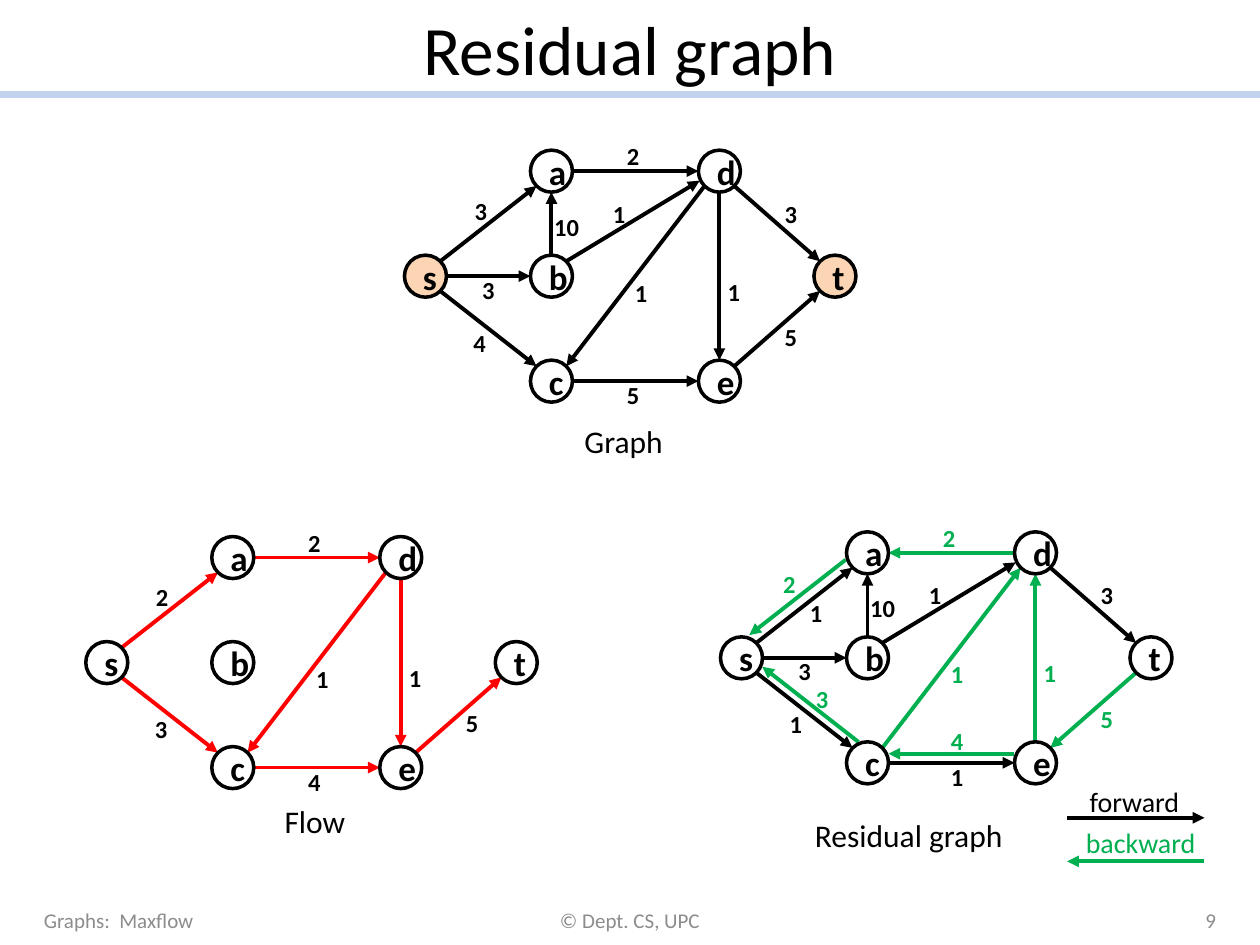
from pptx import Presentation
from pptx.dml.color import RGBColor
from pptx.enum.shapes import MSO_CONNECTOR, MSO_SHAPE
from pptx.enum.text import MSO_ANCHOR, MSO_AUTO_SIZE, PP_ALIGN
from pptx.oxml.ns import qn
from pptx.util import Pt
from lxml import etree

STRAIGHT, OVAL = MSO_CONNECTOR.STRAIGHT, MSO_SHAPE.OVAL
LEFT, CENTER, RIGHT = PP_ALIGN.LEFT, PP_ALIGN.CENTER, PP_ALIGN.RIGHT
TOP, MIDDLE = MSO_ANCHOR.TOP, MSO_ANCHOR.MIDDLE
FIT = MSO_AUTO_SIZE.SHAPE_TO_FIT_TEXT

BLACK, RED, GREEN = "000000", "FF0000", "00B050"
GRAY, PEACH, PALE_BLUE = "8C8C8C", "FCD5B5", "C2D1ED"

DIAMETER = 24
DIAGONAL = 8.49  # reach of a 45 degree point on a node's outline
# Offsets from the top left corner of a graph
NODES = {"s": (0, 60), "a": (72, 0), "b": (72, 60), "c": (72, 120),
         "d": (168, 0), "e": (168, 120), "t": (234, 60)}
LABELS = {"sa": (33, 22.7), "ad": (120, -8.6), "sb": (37.4, 67.7),
          "sc": (32.4, 97.9), "ce": (120, 128), "bd": (112, 24.2),
          "ba": (78.5, 31.7), "dt": (210.2, 24.2), "dc": (124.6, 69.4),
          "de": (177.6, 68.7), "et": (210.2, 94.7),
          "as": (28.8, 18), "cs": (47.5, 83.5), "ec": (124.6, 107.3)}
# Backward edges drawn beside a forward edge
SHIFTS = {"as": (-4, -4.5), "cs": (3.4, -3.4), "ec": (0, -5.2)}
END_NUDGES = {"bd": (-2.8, -3)}

# Edges are (ends, capacity or flow)
GRAPHS = [
    {"origin": (231.1, 85.8), "color": BLACK, "fills": {"s": PEACH, "t": PEACH},
     "edges": [("sa", 3), ("ad", 2), ("sb", 3), ("sc", 4), ("ce", 5), ("bd", 1),
               ("ba", 10), ("dt", 3), ("dc", 1), ("de", 1), ("et", 5)]},
    {"origin": (49, 306.6), "color": RED,
     "edges": [("sa", 2), ("ad", 2), ("sc", 3), ("ce", 4), ("dc", 1), ("de", 1),
               ("et", 5)]},
    {"origin": (411.7, 303.9), "color": BLACK,
     "edges": [("sa", 1), ("sb", 3), ("sc", 1), ("ce", 1), ("bd", 1), ("ba", 10),
               ("dt", 3)],
     "backward": [("as", 2), ("da", 2), ("cs", 3), ("ec", 4), ("cd", 1),
                  ("ed", 1), ("te", 5)],
     "labels": {"sa": (44, 34.5), "ce": (124.6, 128)}},
]

# Text, left, top, width, height, size, colour
CAPTIONS = [
    ("Graph", 326.9, 237.6, 59.8, 29, 18, BLACK),
    ("Flow", 155.5, 455, 49.7, 29, 18, BLACK),
    ("Residual graph", 458.6, 463, 123, 29, 18, BLACK),
    ("forward", 615.6, 445, 66.2, 26.6, 16, BLACK),
    ("backward", 613.4, 468, 77.8, 26.6, 16, GREEN),
]
# Text, left, top, width, height, size, colour, alignment
FRAME_TEXTS = [
    ("Residual graph", 36, 0, 648, 54, 39.6, BLACK, CENTER),
    ("Graphs:  Maxflow", 18, 511.2, 168, 28.8, 12, GRAY, LEFT),
    ("© Dept. CS, UPC", 246, 511.2, 228, 28.8, 12, GRAY, CENTER),
    ("9", 534, 511.2, 168, 28.8, 12, GRAY, RIGHT),
]
LEGEND_ARROWS = [((609.8, 467.3), (688.3, 467.3), BLACK),
                 ((688.3, 492.2), (609.8, 492.2), GREEN)]


def rgb(color):
    return RGBColor.from_string(color)


def write(shape, text, align=LEFT, anchor=TOP, wrap=True, **font_format):
    frame = shape.text_frame
    frame.word_wrap = wrap
    frame.vertical_anchor = anchor
    if not wrap:
        frame.auto_size = FIT
    paragraph = frame.paragraphs[0]
    paragraph.alignment = align
    run = paragraph.add_run()
    run.text = text
    values = {"name": "Calibri", "size": Pt(12), "bold": False, **font_format}
    color = values.pop("color", BLACK)
    for name, value in values.items():
        setattr(run.font, name, value)
    run.font.color.rgb = rgb(color)


def add_text(slide, text, left, top, width, height, **text_format):
    box = slide.shapes.add_textbox(Pt(left), Pt(top), Pt(width), Pt(height))
    write(box, text, **text_format)


def add_line(slide, start, end, color, width=2.25, arrow=True):
    line = slide.shapes.add_connector(STRAIGHT, *map(Pt, (*start, *end)))
    line.line.color.rgb = rgb(color)
    line.line.width = Pt(width)
    if arrow:
        etree.SubElement(line.line._get_or_add_ln(), qn("a:tailEnd"), type="triangle")
    etree.SubElement(line._element.spPr, qn("a:effectLst"))


def add_node(slide, name, left, top, fill):
    node = slide.shapes.add_shape(OVAL, Pt(left), Pt(top), Pt(DIAMETER), Pt(DIAMETER))
    node.shadow.inherit = False
    if fill:
        node.fill.solid()
        node.fill.fore_color.rgb = rgb(fill)
    else:
        node.fill.background()
    node.line.color.rgb = rgb(BLACK)
    node.line.width = Pt(2)
    write(node, name, align=CENTER, anchor=MIDDLE, size=Pt(20), bold=True)


def sign(number):
    return (number > 0) - (number < 0)


def edge_ends(edge, origin):
    """Join the outline points, at multiples of 45 degrees, that face each other."""
    tail, head = (NODES[name] for name in edge)
    steps = [sign(b - a) for a, b in zip(tail, head)]
    reach = DIAGONAL if all(steps) else DIAMETER / 2
    shift = SHIFTS.get(edge, (0, 0))
    nudge = END_NUDGES.get(edge, (0, 0))
    base = [o + DIAMETER / 2 + s for o, s in zip(origin, shift)]
    start = [o + a + reach * step for o, a, step in zip(base, tail, steps)]
    end = [o + b - reach * step + n for o, b, step, n in zip(base, head, steps, nudge)]
    return start, end


def add_graph(slide, graph):
    x, y = graph["origin"]
    label_places = {**LABELS, **graph.get("labels", {})}
    edges = [(*edge, graph["color"], BLACK) for edge in graph["edges"]]
    edges += [(*edge, GREEN, GREEN) for edge in graph.get("backward", [])]
    for edge, _, color, _ in edges:
        add_line(slide, *edge_ends(edge, (x, y)), color)
    for name, (left, top) in NODES.items():
        add_node(slide, name, x + left, y + top, graph.get("fills", {}).get(name))
    for edge, value, _, color in edges:
        left, top = label_places.get(edge) or label_places[edge[::-1]]
        width = 14.4 + 7.1 * len(str(value))
        add_text(slide, str(value), x + left, y + top, width, 24.2,
                 wrap=False, size=Pt(14), bold=True, color=color)


def main():
    presentation = Presentation()
    presentation.slide_width, presentation.slide_height = Pt(720), Pt(540)
    slide = presentation.slides.add_slide(presentation.slide_layouts[6])
    add_line(slide, (0, 54), (720, 54), PALE_BLUE, width=4, arrow=False)
    for text, *place, size, color, align in FRAME_TEXTS:
        add_text(slide, text, *place, align=align, anchor=MIDDLE,
                 size=Pt(size), color=color)
    for graph in GRAPHS:
        add_graph(slide, graph)
    for text, *place, size, color in CAPTIONS:
        add_text(slide, text, *place, wrap=False, size=Pt(size), color=color)
    for arrow in LEGEND_ARROWS:
        add_line(slide, *arrow)
    presentation.save("out.pptx")


if __name__ == "__main__":
    main()
